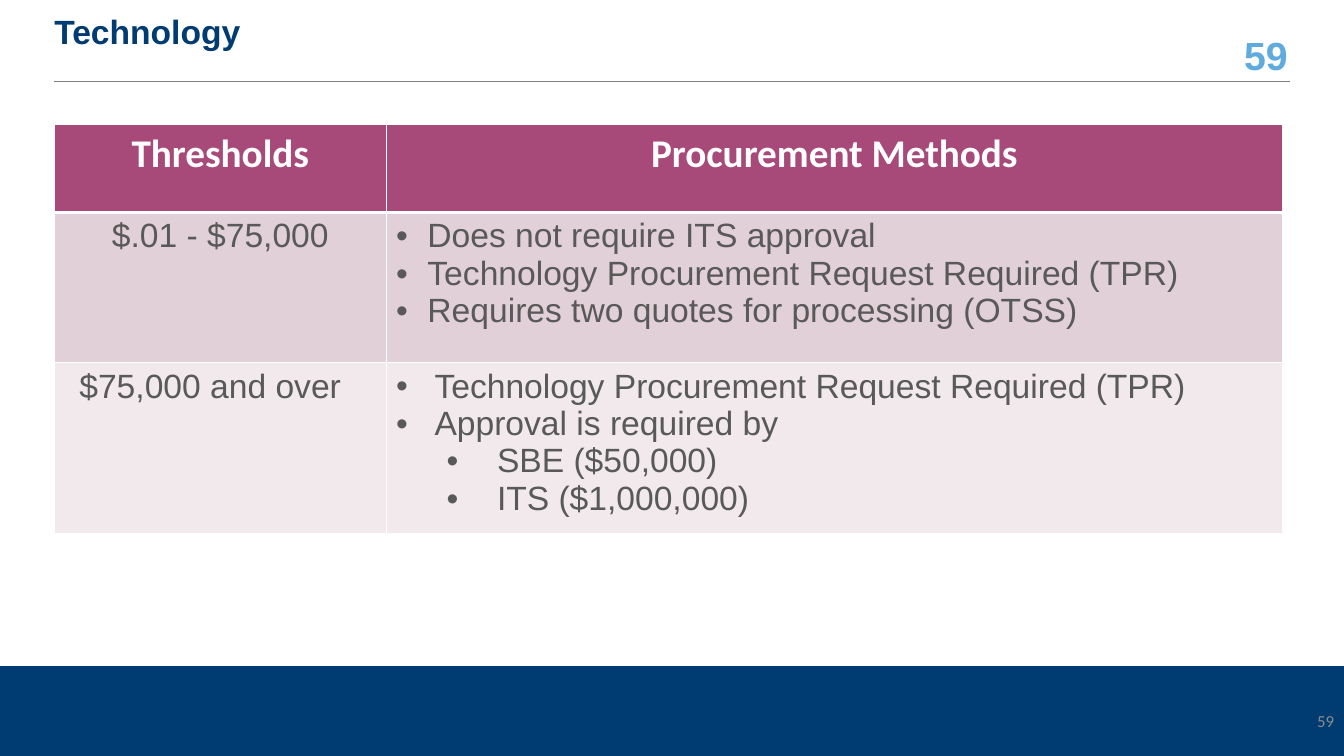
from lxml.etree import SubElement
from pptx import Presentation
from pptx.dml.color import RGBColor
from pptx.enum.shapes import MSO_CONNECTOR as CONN, MSO_SHAPE as SHAPE
from pptx.enum.text import MSO_ANCHOR as ANCHOR, PP_ALIGN as ALIGN
from pptx.oxml import parse_xml
from pptx.oxml.ns import nsdecls, qn
from pptx.util import Inches, Pt

NAVY = RGBColor(0x00, 0x3B, 0x71)
SKY = RGBColor(0x5F, 0xAA, 0xDE)
GRAY = RGBColor(0x80, 0x80, 0x80)
PALE_GRAY = RGBColor(0x8C, 0x8C, 0x8C)
BODY = RGBColor(0x59, 0x59, 0x59)
PLUM = RGBColor(0xA7, 0x49, 0x79)
ROSE = RGBColor(0xE1, 0xD0, 0xD7)
BLUSH = RGBColor(0xF1, 0xE9, 0xEC)
WHITE = RGBColor(0xFF, 0xFF, 0xFF)

SLIDE_W, SLIDE_H = Inches(13.33), Inches(7.5)
LEFT = 4.05  # left edge of rule and table, percent of width

# Table content: bullets are (level, left indent, hanging indent, text)
HEADERS = ["Thresholds", "Procurement Methods"]
ROWS = [
    ("$.01 - $75,000", ROSE, 0.1, [
        (0, 0.31, 0.31, "Does not require ITS approval"),
        (0, 0.31, 0.31, "Technology Procurement Request Required (TPR)"),
        (0, 0.31, 0.31, "Requires two quotes for processing (OTSS)"),
    ]),
    ("$75,000 and over", BLUSH, 0.3, [
        (0, 0.38, 0.38, "Technology Procurement Request Required (TPR)"),
        (0, 0.38, 0.38, "Approval is required by"),
        (1, 1, 0.5, "SBE ($50,000)"),
        (1, 1, 0.5, "ITS ($1,000,000)"),
    ]),
]
COLUMN_WIDTHS = [24.68, 66.69]
ROW_HEIGHTS = [11.6, 19.87, 21.07]


def px(percent):
    """Share of the slide width."""
    return int(SLIDE_W * percent / 100)


def py(percent):
    """Share of the slide height."""
    return int(SLIDE_H * percent / 100)


def style(p, size, color, bold=False, font="Arial", align=ALIGN.LEFT):
    p.alignment = align
    p.font.name, p.font.size, p.font.bold = font, Pt(size), bold
    p.font.color.rgb = color


def add_label(s, x, y, w, h, text, *args, **kwargs):
    tf = s.shapes.add_textbox(px(x), py(y), px(w), py(h)).text_frame
    tf.word_wrap = True
    tf.vertical_anchor = ANCHOR.MIDDLE
    p = tf.paragraphs[0]
    p.text = text
    style(p, *args, **kwargs)


def add_band(s, y, h):
    sp = s.shapes.add_shape(SHAPE.RECTANGLE, 0, py(y), SLIDE_W, py(h))
    sp.shadow.inherit = False
    sp.fill.solid()
    sp.fill.fore_color.rgb = NAVY
    sp.line.fill.background()


def add_rule(s, x1, x2, y):
    rule = s.shapes.add_connector(CONN.STRAIGHT, px(x1), py(y), px(x2), py(y))
    rule.line.color.rgb = GRAY
    rule.line.width = Pt(0.5)
    SubElement(rule._element.spPr, qn("a:effectLst"))


def paint_cell(cell, color, bottom=1):
    cell.fill.solid()
    cell.fill.fore_color.rgb = color
    tc_pr = cell._tc.get_or_add_tcPr()
    for i, (side, width) in enumerate(zip("LRTB", (1, 1, 1, bottom))):
        tc_pr.insert(i, parse_xml(
            f'<a:ln{side} {nsdecls("a")} w="{Pt(width)}"><a:solidFill>'
            f'<a:srgbClr val="{WHITE}"/></a:solidFill></a:ln{side}>'))


def fill_bullets(cell, bullets):
    tf = cell.text_frame
    for i, (level, indent, hanging, text) in enumerate(bullets):
        p = tf.add_paragraph() if i else tf.paragraphs[0]
        p.text, p.level = text, level
        p_pr = p._p.get_or_add_pPr()
        p_pr.set("marL", str(Inches(indent)))
        p_pr.set("indent", str(-Inches(hanging)))
        SubElement(p_pr, qn("a:buFont"), typeface="Arial")
        SubElement(p_pr, qn("a:buChar"), char="•")
        style(p, 24, BODY)


def add_thresholds_table(s, x, y):
    table = s.shapes.add_table(
        len(ROW_HEIGHTS), len(COLUMN_WIDTHS), px(x), py(y),
        px(sum(COLUMN_WIDTHS)), py(sum(ROW_HEIGHTS))).table
    for column, width in zip(table.columns, COLUMN_WIDTHS):
        column.width = px(width)
    for row, height in zip(table.rows, ROW_HEIGHTS):
        row.height = py(height)

    # Header row
    for c, text in enumerate(HEADERS):
        cell = table.cell(0, c)
        cell.text = text
        style(cell.text_frame.paragraphs[0], 28, WHITE, True, "Calibri", ALIGN.CENTER)
        paint_cell(cell, PLUM, bottom=3)

    # Threshold rows
    for r, (threshold, color, right_margin, bullets) in enumerate(ROWS, 1):
        amount, methods = table.cell(r, 0), table.cell(r, 1)
        amount.text = threshold
        amount.margin_right = Inches(right_margin)
        style(amount.text_frame.paragraphs[0], 24, BODY, align=ALIGN.CENTER)
        fill_bullets(methods, bullets)
        for cell in (amount, methods):
            paint_cell(cell, color)


def main():
    prs = Presentation()
    prs.slide_width, prs.slide_height = SLIDE_W, SLIDE_H
    s = prs.slides.add_slide(prs.slide_layouts[6])

    # Frame: footer band, large page number and header rule
    add_band(s, 88.1, 11.9)
    add_label(s, 90.55, 4.4, 6, 5.6, "59", 28, SKY, True, align=ALIGN.RIGHT)
    add_rule(s, LEFT, 96, 10.7)

    # Title and footer page number
    add_label(s, 3.3, 1.5, 80, 5.3, "Technology", 24, NAVY, True)
    add_label(s, 77.5, 92.7, 22.5, 5.3, "59", 12, PALE_GRAY,
              font="Calibri", align=ALIGN.RIGHT)

    add_thresholds_table(s, LEFT, 16.5)
    prs.save("out.pptx")


if __name__ == "__main__":
    main()
